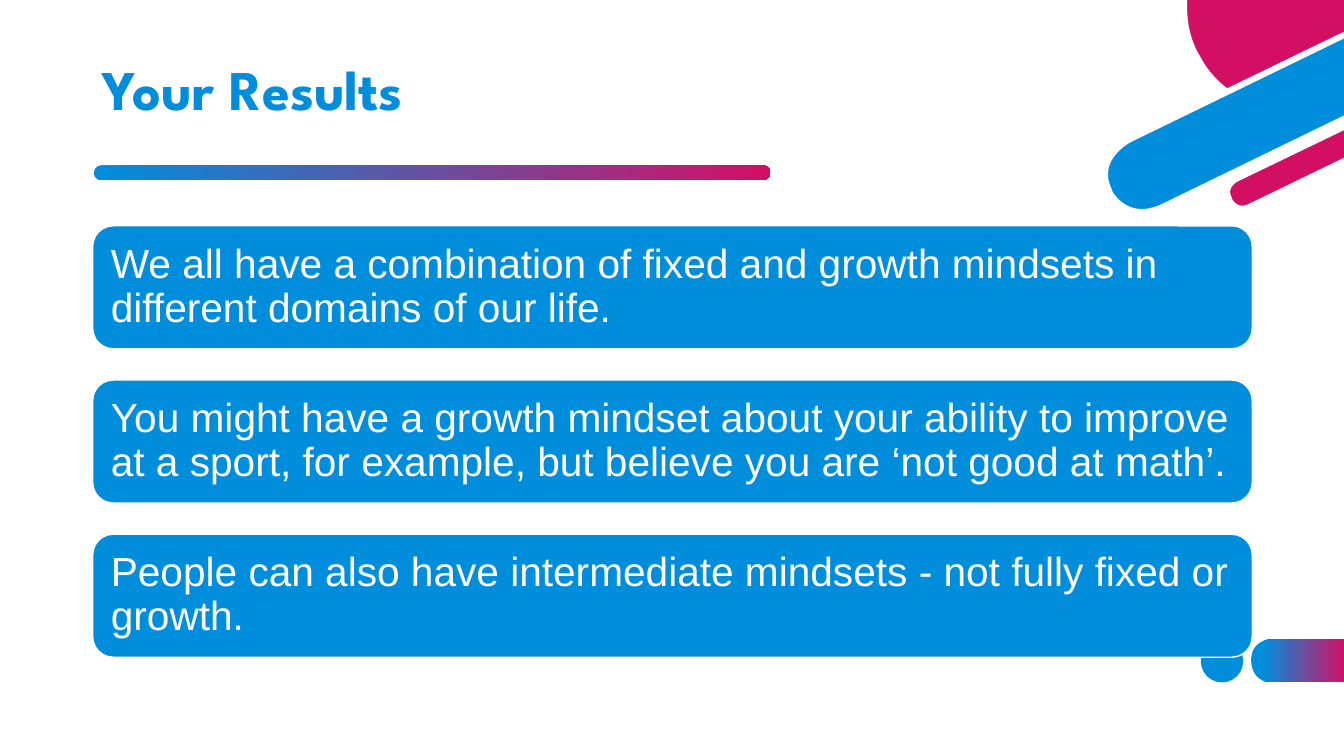
"""Build the "Your Results" slide: three message cards with corner decoration."""
from pptx import Presentation
from pptx.dml.color import RGBColor
from pptx.enum.shapes import MSO_SHAPE as Shape
from pptx.enum.text import MSO_ANCHOR as Anchor, PP_ALIGN as Align
from pptx.util import Pt

PX = 9144
PAGE_SIZE = (1333, 750)
BLUE, PINK, WHITE = "008EDC", "D30F64", "FFFFFF"

TITLE = "Your Results"
TITLE_BOX = (92, 40, 990, 103)
MESSAGES = [
    "We all have a combination of fixed and growth mindsets in different domains of our life.",
    "You might have a growth mindset about your ability to improve at a sport, for example, "
    "but believe you are ‘not good at math’.",
    "People can also have intermediate mindsets - not fully fixed or growth.",
]
CARD_LEFT, CARD_TOP, CARD_WIDTH, CARD_HEIGHT, CARD_GAP = 92, 224, 1150, 122, 31
CARD_INSET_X, CARD_INSET_Y = 12, 12

DOT_BOX = (1191, 635, 42, 42)
RULE_BOX = (93, 164, 671, 15)
TAB = [(1262, 677), (1334, 677), (1334, 634), (1262, 634),
       (1262, 634, 1241, 634, 1241, 655), (1241, 656), (1241, 656, 1241, 677, 1262, 677)]
STRIPES = [
    (BLUE, [(1121, 139), (1121, 139, 1085, 157, 1101, 189), (1101, 190),
            (1101, 190, 1117, 222, 1154, 204), (1343, 112), (1343, 31)]),
    (PINK, [(1188, 56), (1188, 56, 1197, 76, 1217, 90), (1343, 29), (1343, -10),
            (1176, -10), (1174, 15, 1176, 33, 1186, 53)]),
    (PINK, [(1343, 122), (1227, 178), (1227, 178, 1213, 185, 1220, 197), (1220, 198),
            (1220, 198, 1226, 211, 1240, 204), (1343, 154)]),
]


def color(code):
    return RGBColor.from_string(code)


def emu(lengths):
    return [length * PX for length in lengths]


def assign(target, values):
    for name, value in values.items():
        setattr(target, name, value)


def paint(fill, first, last=None, start=0):
    """Apply a solid fill, or a left-to-right gradient when a last colour is given."""
    if last is None:
        fill.solid()
        fill.fore_color.rgb = color(first)
        return
    fill.gradient()
    fill.gradient_angle = 0
    for stop, code, position in zip(fill.gradient_stops, (first, last), (start, 1)):
        assign(stop, {"position": position})
        stop.color.rgb = color(code)


def finish(shape, *colors, start=0, outline=0):
    shape.shadow.inherit = False
    paint(shape.fill, *colors, start=start)
    if outline:
        paint(shape.line.fill, WHITE)
        shape.line.width = Pt(outline)
    else:
        shape.line.fill.background()


def flatten(outline, steps=24):
    """Turn line ends and cubic curves into a list of points."""
    points = [outline[0]]
    for segment in outline[1:]:
        if len(segment) == 2:
            points.append(segment)
            continue
        x0, y0 = points[-1]
        x1, y1, x2, y2, x3, y3 = segment
        for step in range(1, steps + 1):
            t = step / steps
            a, b, c, d = (1 - t) ** 3, 3 * t * (1 - t) ** 2, 3 * t * t * (1 - t), t ** 3
            points.append((a * x0 + b * x1 + c * x2 + d * x3,
                           a * y0 + b * y1 + c * y2 + d * y3))
    return points


def add_outline(page, outline):
    first, *rest = [emu(point) for point in flatten(outline)]
    builder = page.shapes.build_freeform(*first, scale=1.0)
    builder.add_line_segments(rest, close=True)
    return builder.convert_to_shape()


def write(shape, text, frame_format, font_format, align=Align.LEFT):
    frame = shape.text_frame
    assign(frame, {"word_wrap": True, "vertical_anchor": Anchor.MIDDLE, **frame_format})
    para = frame.paragraphs[0]
    assign(para, {"alignment": align, "line_spacing": 0.9})
    span = para.add_run()
    span.text = text
    assign(span.font, font_format)
    return span


def add_decoration(page):
    finish(page.shapes.add_shape(Shape.OVAL, *emu(DOT_BOX)), BLUE)
    finish(add_outline(page, TAB), BLUE, PINK, start=0.12)
    for code, outline in STRIPES:
        finish(add_outline(page, outline), code, outline=3)
    rule = page.shapes.add_shape(Shape.ROUNDED_RECTANGLE, *emu(RULE_BOX))
    rule.adjustments[0] = 0.5
    finish(rule, BLUE, PINK)


def add_title(page):
    title = page.shapes.title
    assign(title, dict(zip(("left", "top", "width", "height"), emu(TITLE_BOX))))
    span = write(title, TITLE, {}, {"name": "League Spartan", "size": Pt(40), "bold": True})
    paint(span.font.fill, BLUE, PINK)


def add_cards(page):
    inset_x, inset_y = emu((CARD_INSET_X, CARD_INSET_Y))
    insets = {"margin_left": inset_x, "margin_right": inset_x,
              "margin_top": inset_y, "margin_bottom": inset_y}
    for index, message in enumerate(MESSAGES):
        top = CARD_TOP + index * (CARD_HEIGHT + CARD_GAP)
        card = page.shapes.add_shape(
            Shape.ROUNDED_RECTANGLE, *emu((CARD_LEFT, top, CARD_WIDTH, CARD_HEIGHT)))
        finish(card, BLUE, outline=1)
        span = write(card, message, insets, {"name": "Arial", "size": Pt(29)})
        paint(span.font.fill, WHITE)


def main():
    deck = Presentation()
    assign(deck, dict(zip(("slide_width", "slide_height"), emu(PAGE_SIZE))))
    page = deck.slides.add_slide(deck.slide_layouts[5])
    add_decoration(page)
    add_title(page)
    add_cards(page)
    deck.save("out.pptx")


if __name__ == "__main__":
    main()
